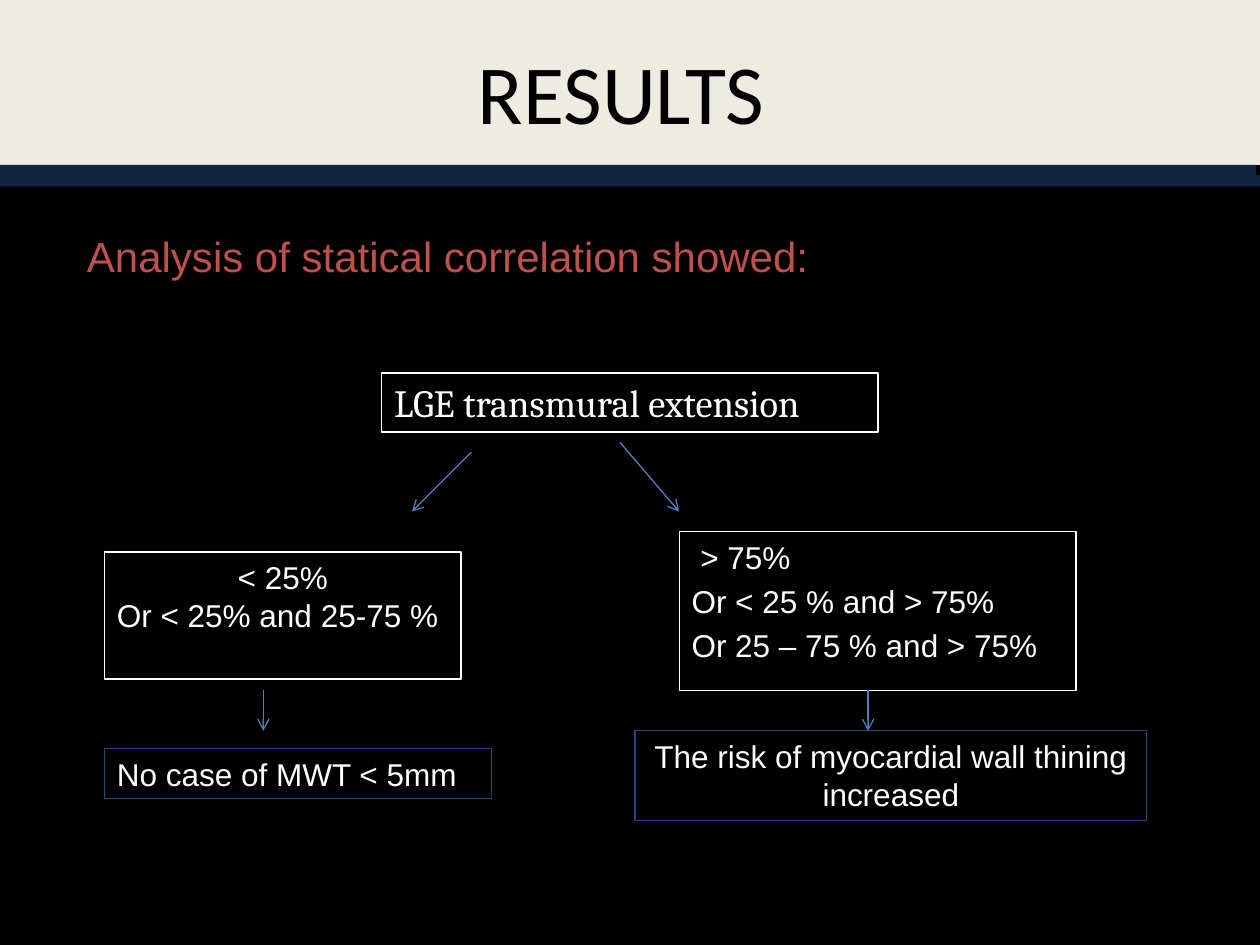
from lxml.etree import SubElement
from pptx import Presentation
from pptx.dml.color import RGBColor
from pptx.enum.shapes import MSO_CONNECTOR as Connector, MSO_SHAPE as Preset
from pptx.enum.text import MSO_ANCHOR as Anchor, PP_ALIGN as Align
from pptx.oxml.ns import qn
from pptx.util import Inches, Pt

COLORS = {"background": "000000", "band": "EEECE1", "rule": "10253F",
          "heading": "C0504D", "white": "FFFFFF", "navy": "1F497D",
          "arrow": "4F81BD", "title": "000000"}
COLUMNS, ROWS = 100, 75
WIDTH, HEIGHT = Inches(10), Inches(7.5)


def color(name):
    return RGBColor.from_string(COLORS[name])


def place(column, row, columns, rows):
    return (int(WIDTH * column / COLUMNS), int(HEIGHT * row / ROWS),
            int(WIDTH * columns / COLUMNS), int(HEIGHT * rows / ROWS))


def apply(target, values):
    for name, value in values.items():
        setattr(target, name, value)


def write(shape, lines, font, anchor=Anchor.TOP):
    frame = shape.text_frame
    apply(frame, {"word_wrap": True, "vertical_anchor": anchor})
    for index, (text, layout) in enumerate(lines):
        paragraph = frame.paragraphs[0] if index == 0 else frame.add_paragraph()
        run = paragraph.add_run()
        run.text = text
        apply(paragraph, {"alignment": Align.LEFT, "space_before": Pt(0), **layout})
        apply(run.font, {"name": font["name"], "size": Pt(font["size"])})
        run.font.color.rgb = color(font["color"])


def add_bands(slide, bands):
    tree = slide.shapes.title.element.getparent()
    for index, (box, fill) in enumerate(bands):
        shape = slide.shapes.add_shape(Preset.RECTANGLE, *place(*box))
        shape.shadow.inherit = False
        shape.fill.solid()
        shape.fill.fore_color.rgb = color(fill)
        shape.line.fill.background()
        tree.insert(2 + index, shape.element)


def fill_placeholder(shape, box, text, font, alignment, anchor):
    apply(shape, dict(zip(("left", "top", "width", "height"), place(*box))))
    write(shape, [(text, {"alignment": alignment})], font, anchor)
    properties = shape.text_frame.paragraphs[0]._p.get_or_add_pPr()
    properties.set("marL", "0")
    properties.set("indent", "0")
    SubElement(properties, qn("a:buNone"))


def add_box(slide, box, lines, border, size=18, name="Arial"):
    shape = slide.shapes.add_shape(Preset.RECTANGLE, *place(*box))
    shape.shadow.inherit = False
    shape.fill.background()
    shape.line.color.rgb = color(border)
    shape.line.width = Pt(0.75)
    write(shape, lines, {"name": name, "size": size, "color": "white"})


def add_arrow(slide, start, end):
    ends = place(*start, *end)
    arrow = slide.shapes.add_connector(Connector.STRAIGHT, *ends)
    arrow.line.color.rgb = color("arrow")
    arrow.line.width = Pt(0.75)
    SubElement(arrow.line._get_or_add_ln(), qn("a:tailEnd"), type="arrow")
    SubElement(arrow.element.spPr, qn("a:effectLst"))


def add_header(slide):
    add_bands(slide, [((0, 13.9, 100, 0.9), "rule"),
                      ((0, 0, 100, 13.1), "band"),
                      ((-0.3, 13.1, 100, 1.6), "rule")])
    fill_placeholder(slide.shapes.title, (4.3, 1.4, 90, 11.7), "RESULTS",
                     {"name": "Calibri", "size": 48, "color": "title"},
                     Align.CENTER, Anchor.MIDDLE)
    fill_placeholder(slide.placeholders[1], (5.9, 17.8, 86.6, 5),
                     "Analysis of statical correlation showed:",
                     {"name": "Arial", "size": 24, "color": "heading"},
                     Align.LEFT, Anchor.TOP)


def add_flow(slide):
    spaced = {"space_before": Pt(3.6)}
    centered = {"alignment": Align.CENTER}
    add_box(slide, (30.3, 29.6, 39.4, 4.7), [("LGE transmural extension", {})],
            "white", 22, "Cambria")
    add_box(slide, (8.3, 43.8, 28.3, 10.1),
            [("< 25%", centered), ("Or < 25% and 25-75 %", {})], "white")
    add_box(slide, (53.9, 42.2, 31.5, 12.6),
            [(" > 75%", spaced), ("Or < 25 % and > 75%", spaced),
             ("Or 25 – 75 % and > 75%", spaced)], "white")
    add_box(slide, (8.3, 59.4, 30.7, 4), [("No case of MWT < 5mm", {})], "navy")
    add_box(slide, (50.4, 58, 40.6, 7.1),
            [("The risk of myocardial wall thining increased", centered)], "navy")
    for start, end in [((37.4, 35.9), (32.7, 40.6)), ((49.2, 35.1), (53.9, 40.6)),
                       ((20.9, 54.8), (20.9, 58)), ((68.9, 54.8), (68.9, 58))]:
        add_arrow(slide, start, end)


def main():
    presentation = Presentation()
    apply(presentation, {"slide_width": WIDTH, "slide_height": HEIGHT})
    slide = presentation.slides.add_slide(presentation.slide_layouts[1])
    slide.background.fill.solid()
    slide.background.fill.fore_color.rgb = color("background")
    add_header(slide)
    add_flow(slide)
    presentation.save("out.pptx")


if __name__ == "__main__":
    main()
